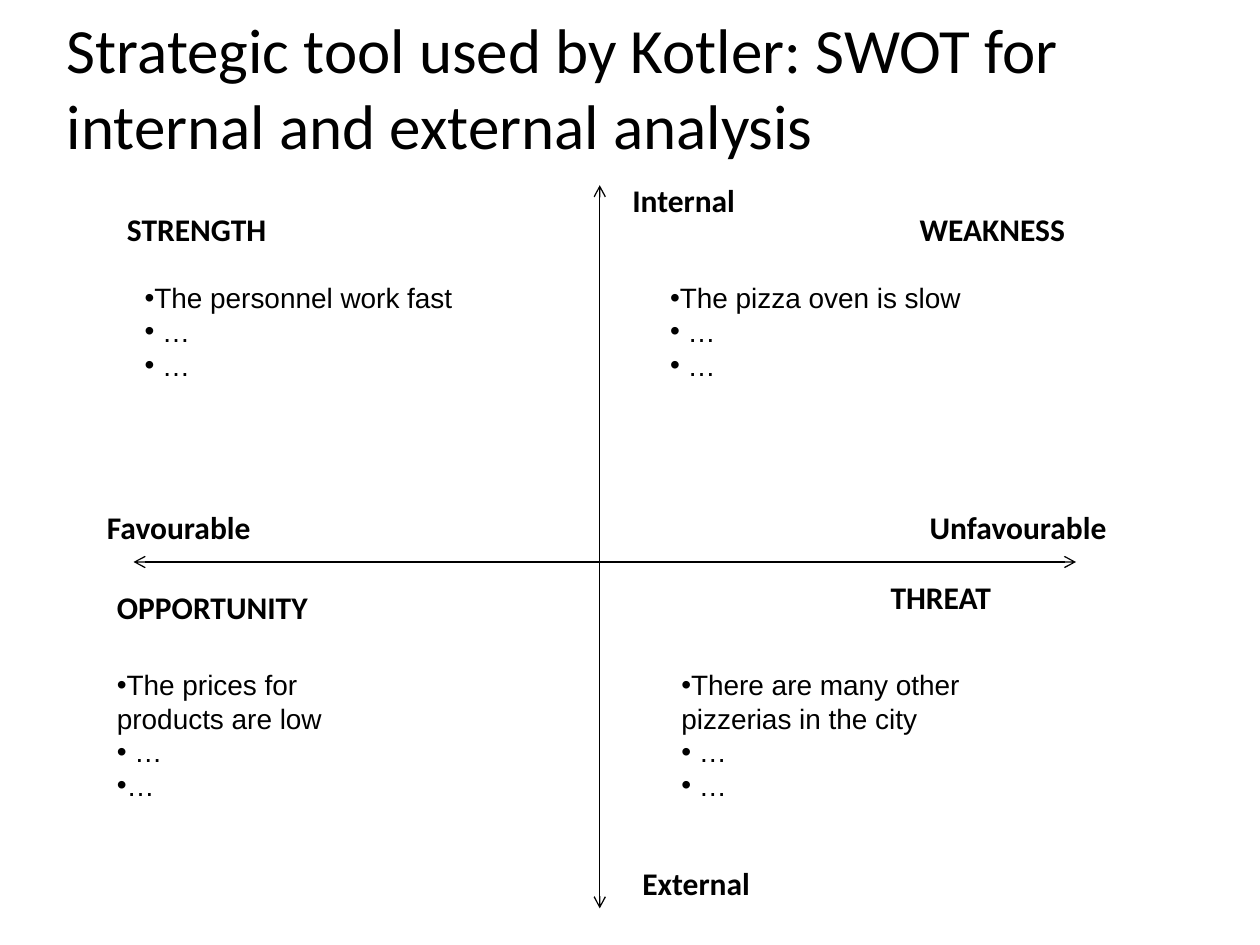
from dataclasses import dataclass

from lxml import etree
from pptx import Presentation
from pptx.dml.color import RGBColor
from pptx.enum.shapes import MSO_CONNECTOR
from pptx.enum.text import MSO_ANCHOR, MSO_AUTO_SIZE, PP_ALIGN
from pptx.oxml.ns import qn
from pptx.slide import Slide
from pptx.text.text import TextFrame
from pptx.util import Inches, Length, Pt

STRAIGHT = MSO_CONNECTOR.STRAIGHT
MIDDLE = MSO_ANCHOR.MIDDLE
GROW = MSO_AUTO_SIZE.SHAPE_TO_FIT_TEXT
LEFT = PP_ALIGN.LEFT

SLIDE_WIDTH, SLIDE_HEIGHT = Inches(10), Inches(7.5)
TITLE_ONLY = 5
BLACK = "000000"
LABEL_HEIGHT = 5.33
QUADRANT_WIDTH = 23.6


# Positions and sizes are percentages of the slide's width and height
@dataclass
class Label:
    text: str
    left: float
    top: float
    width: float


@dataclass
class Factors:
    items: list[str]
    left: float
    top: float
    width: float
    height: float


@dataclass
class Axis:
    start: tuple[float, float]
    end: tuple[float, float]


AXES = [
    Axis((47.6, 19.6), (47.6, 96.13)),
    Axis((10.6, 59.47), (85.4, 59.47)),
]

LABELS = [
    # Ends of the axes
    Label("Internal", 49.2, 18.53, 11),
    Label("External", 50, 90.8, 11),
    Label("Unfavourable", 72.8, 53.07, 18.1),
    Label("Favourable", 7.5, 53.07, 15.7),
    # Quadrant headings
    Label("STRENGTH", 9.1, 21.6, QUADRANT_WIDTH),
    Label("WEAKNESS", 72, 21.6, QUADRANT_WIDTH),
    Label("OPPORTUNITY", 8.3, 61.6, QUADRANT_WIDTH),
    Label("THREAT", 69.7, 60.53, QUADRANT_WIDTH),
]

FACTORS = [
    Factors(["The personnel work fast", " …", " …"], 10.5, 29.07, 29.3, 12.13),
    Factors(["The pizza oven is slow", " …", " …"], 52.2, 29.07, 25.4, 12.13),
    Factors(["There are many other pizzerias in the city", " …", " …"],
            53.1, 70, 25.4, 15.73),
    Factors(["The prices for products are low", " …", "…"],
            8.3, 70, 25.4, 15.73),
]


def across(percent: float) -> Length:
    return Length(round(SLIDE_WIDTH * percent / 100))


def down(percent: float) -> Length:
    return Length(round(SLIDE_HEIGHT * percent / 100))


def colour(hex_code: str) -> RGBColor:
    return RGBColor.from_string(hex_code)


def format_text(frame: TextFrame, font_name: str, size: float, bold: bool = False) -> None:
    for paragraph in frame.paragraphs:
        paragraph.alignment = LEFT
        for run in paragraph.runs:
            run.font.name = font_name
            run.font.size = Pt(size)
            run.font.bold = bold
            run.font.color.rgb = colour(BLACK)


def add_text(slide: Slide, text: str, left: float, top: float,
             width: float, height: float) -> TextFrame:
    frame = slide.shapes.add_textbox(
        across(left), down(top), across(width), down(height)).text_frame
    frame.word_wrap = True
    frame.auto_size = GROW
    frame.text = text
    return frame


def draw_title(slide: Slide, text: str) -> None:
    title = slide.shapes.title
    title.left, title.top = across(4.3), down(0.8)
    title.width, title.height = across(94.5), down(16.67)
    title.text_frame.text = text
    title.text_frame.vertical_anchor = MIDDLE
    format_text(title.text_frame, "Calibri", 36)


def draw_axis(slide: Slide, axis: Axis) -> None:
    (x1, y1), (x2, y2) = axis.start, axis.end
    connector = slide.shapes.add_connector(
        STRAIGHT, across(x1), down(y1), across(x2), down(y2))
    connector.line.color.rgb = colour(BLACK)
    connector.line.width = Pt(0.75)
    # Open arrowheads at both ends, no shadow
    properties = connector.element.spPr
    outline = properties.find(qn("a:ln"))
    for end in ("a:headEnd", "a:tailEnd"):
        etree.SubElement(outline, qn(end), type="arrow")
    etree.SubElement(properties, qn("a:effectLst"))


def draw_label(slide: Slide, label: Label) -> None:
    frame = add_text(slide, label.text, label.left, label.top,
                     label.width, LABEL_HEIGHT)
    format_text(frame, "Calibri", 18, bold=True)


def draw_factors(slide: Slide, factors: Factors) -> None:
    frame = add_text(slide, "\n".join(factors.items), factors.left, factors.top,
                     factors.width, factors.height)
    format_text(frame, "Arial", 16)
    for paragraph in frame.paragraphs:
        properties = paragraph._p.get_or_add_pPr()
        etree.SubElement(properties, qn("a:buFont"), typeface="Arial")
        etree.SubElement(properties, qn("a:buChar"), char="•")


def main() -> None:
    presentation = Presentation()
    presentation.slide_width = SLIDE_WIDTH
    presentation.slide_height = SLIDE_HEIGHT
    slide = presentation.slides.add_slide(presentation.slide_layouts[TITLE_ONLY])

    draw_title(slide, "Strategic tool used by Kotler: SWOT for "
                      "internal and external analysis")
    for axis in AXES:
        draw_axis(slide, axis)
    for label in LABELS:
        draw_label(slide, label)
    for factors in FACTORS:
        draw_factors(slide, factors)

    presentation.save("out.pptx")


if __name__ == "__main__":
    main()
